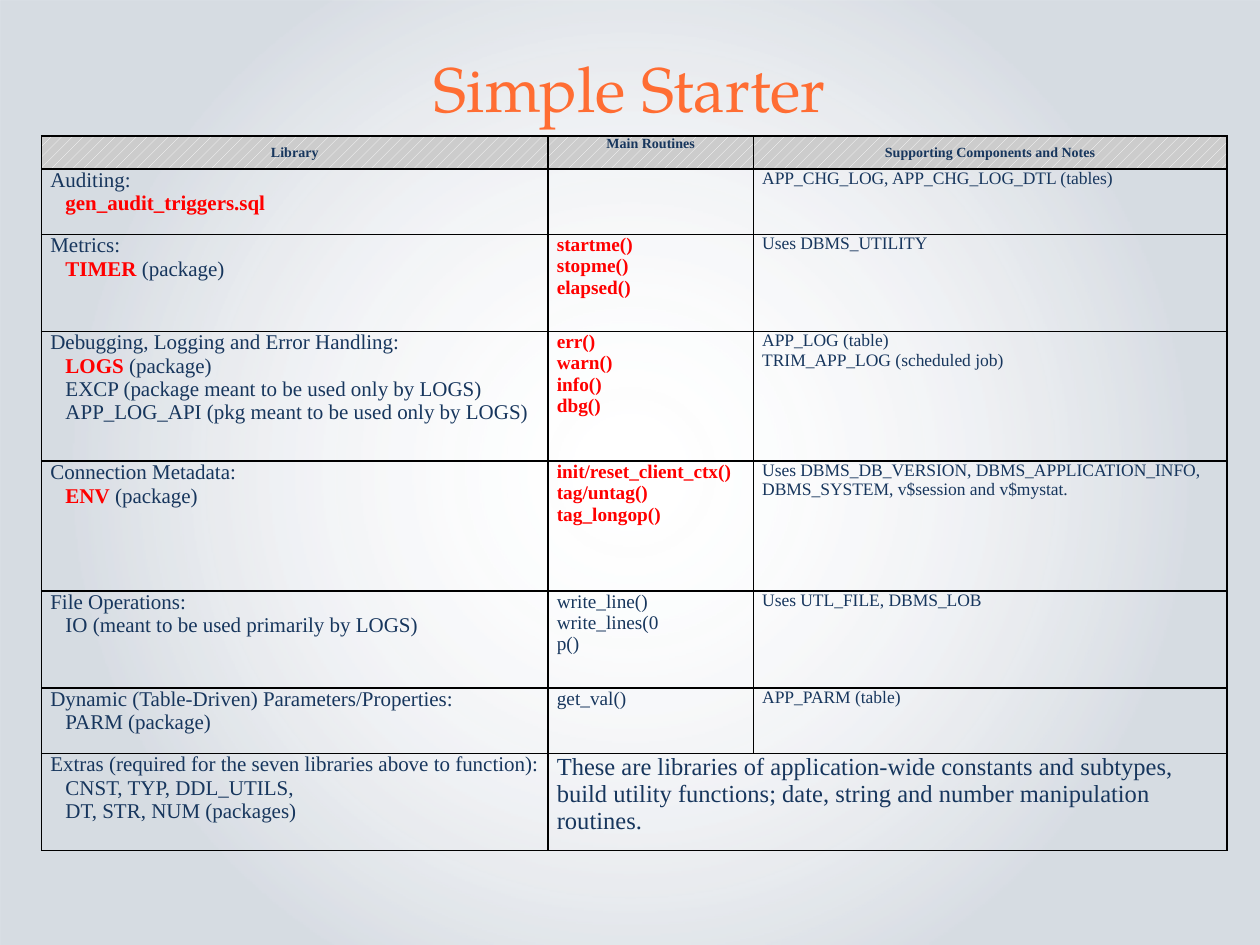
from lxml import etree
from pptx import Presentation
from pptx.dml.color import RGBColor
from pptx.enum.dml import MSO_PATTERN
from pptx.enum.shapes import MSO_SHAPE
from pptx.enum.text import MSO_ANCHOR, PP_ALIGN
from pptx.oxml import parse_xml
from pptx.oxml.ns import qn
from pptx.util import Inches, Pt

CENTER, LEFT = PP_ALIGN.CENTER, PP_ALIGN.LEFT
TOP, MIDDLE = MSO_ANCHOR.TOP, MSO_ANCHOR.MIDDLE
RECTANGLE = MSO_SHAPE.RECTANGLE
PATTERN = MSO_PATTERN.PERCENT_20

# Content: *...* marks a highlighted name, each list item is one paragraph
TITLE = "Simple Starter"
HEADERS = ["Library", "Main Routines", "Supporting Components and Notes"]
LIBRARIES = [
    (["Auditing:", "*gen_audit_triggers.sql*"],
     [],
     ["APP_CHG_LOG, APP_CHG_LOG_DTL (tables)"]),
    (["Metrics:", "*TIMER* (package)"],
     ["*startme()*", "*stopme()*", "*elapsed()*"],
     ["Uses DBMS_UTILITY"]),
    (["Debugging, Logging and Error Handling:", "*LOGS* (package)",
      "EXCP (package meant to be used only by LOGS)",
      "APP_LOG_API (pkg meant to be used only by LOGS)"],
     ["*err()*", "*warn()*", "*info()*", "*dbg()*"],
     ["APP_LOG (table)", "TRIM_APP_LOG (scheduled job)"]),
    (["Connection Metadata:", "*ENV* (package)"],
     ["*init/reset_client_ctx()*", "*tag/untag()*", "*tag_longop()*"],
     ["Uses DBMS_DB_VERSION, DBMS_APPLICATION_INFO, "
      "DBMS_SYSTEM, v$session and v$mystat."]),
    (["File Operations:", "IO (meant to be used primarily by LOGS)"],
     ["write_line()", "write_lines(0", "p()"],
     ["Uses UTL_FILE, DBMS_LOB"]),
    (["Dynamic (Table-Driven) Parameters/Properties:", "PARM (package)"],
     ["get_val()"],
     ["APP_PARM (table)"]),
]
EXTRAS = ["Extras (required for the seven libraries above to function):",
          "CNST, TYP, DDL_UTILS,", "DT, STR, NUM (packages)"]
EXTRAS_NOTE = ["These are libraries of application-wide constants and subtypes, "
               "build utility functions; date, string and number manipulation "
               "routines."]

THEME = {
    "title_font": "TeX Gyre Pagella", "body_font": "Times New Roman",
    "title": "FF6D33", "text": "17365D", "highlight": "FF0000",
    "border": "000000", "hatch": "FFFFFF", "header": "CCCCCC",
    "center": "FFFFFF", "edge": "17365D",
    "title_size": 36, "header_size": 8, "column_sizes": (12, 11, 10),
    "extras_size": 14,
}
COLUMN_WIDTHS = (4.02, 1.63, 3.76)
ROW_HEIGHTS = (0.26, 0.52, 0.77, 1.03, 1.03, 0.77, 0.52, 0.77)
INDENT = 0.12


def write(frame, paragraphs, size, font=THEME["body_font"], color=THEME["text"],
          bold=False, align=LEFT, indent=0):
    """Fill a text frame; paragraphs after the first get the indent."""
    for i, text in enumerate(paragraphs):
        paragraph = frame.paragraphs[0] if i == 0 else frame.add_paragraph()
        paragraph.alignment = align
        if i and indent:
            properties = paragraph._p.get_or_add_pPr()
            properties.set("marL", "0")
            properties.set("indent", str(Inches(indent)))
        for j, part in enumerate(text.split("*")):
            if not part:
                continue
            marked = j % 2 == 1
            run = paragraph.add_run()
            run.text = part
            run.font.name = font
            run.font.size = Pt(size)
            run.font.bold = bold or marked
            run.font.color.rgb = RGBColor.from_string(
                THEME["highlight"] if marked else color)
    if not paragraphs:
        frame.paragraphs[0].font.size = Pt(size)


def add_borders(cell):
    properties = cell._tc.get_or_add_tcPr()
    for i, side in enumerate(("lnL", "lnR", "lnT", "lnB")):
        line = etree.Element(qn(f"a:{side}"), w=str(Pt(1)))
        fill = etree.SubElement(line, qn("a:solidFill"))
        etree.SubElement(fill, qn("a:srgbClr"), val=THEME["border"])
        properties.insert(i, line)


def add_backdrop(slide, width, height):
    backdrop = slide.shapes.add_shape(RECTANGLE, 0, 0, width, height)
    backdrop.shadow.inherit = False
    backdrop.line.fill.background()
    backdrop.fill.background()
    properties = backdrop._element.spPr
    gradient = parse_xml(
        '<a:gradFill xmlns:a="http://schemas.openxmlformats.org/drawingml/2006/main"'
        ' rotWithShape="1"><a:gsLst>'
        f'<a:gs pos="0"><a:srgbClr val="{THEME["center"]}"><a:alpha val="0"/>'
        '</a:srgbClr></a:gs>'
        f'<a:gs pos="72000"><a:srgbClr val="{THEME["edge"]}"><a:alpha val="17000"/>'
        '</a:srgbClr></a:gs></a:gsLst><a:path path="circle">'
        '<a:fillToRect l="50000" t="50000" r="50000" b="50000"/></a:path></a:gradFill>')
    properties.replace(properties.find(qn("a:noFill")), gradient)


def add_library_table(slide):
    table = slide.shapes.add_table(
        len(ROW_HEIGHTS), len(COLUMN_WIDTHS), Inches(0.33), Inches(1.08),
        Inches(sum(COLUMN_WIDTHS)), Inches(sum(ROW_HEIGHTS))).table
    table.first_row = table.horz_banding = False
    for column, width in zip(table.columns, COLUMN_WIDTHS):
        column.width = Inches(width)
    for row, height in zip(table.rows, ROW_HEIGHTS):
        row.height = Inches(height)
    for cell in table.iter_cells():
        cell.margin_left = cell.margin_right = Inches(0.07)
        cell.margin_top = cell.margin_bottom = 0
        cell.vertical_anchor = TOP
        cell.fill.background()
        add_borders(cell)

    # Header row
    for c, header in enumerate(HEADERS):
        cell = table.cell(0, c)
        cell.fill.patterned()
        cell.fill.pattern = PATTERN
        cell.fill.fore_color.rgb = RGBColor.from_string(THEME["hatch"])
        cell.fill.back_color.rgb = RGBColor.from_string(THEME["header"])
        cell.vertical_anchor = TOP if c == 1 else MIDDLE
        write(cell.text_frame, [header], THEME["header_size"], bold=True, align=CENTER)

    # Library rows
    for r, library in enumerate(LIBRARIES, start=1):
        for c, (paragraphs, size) in enumerate(zip(library, THEME["column_sizes"])):
            write(table.cell(r, c).text_frame, paragraphs, size,
                  indent=INDENT if c == 0 else 0)

    # Extras row, with its note across two columns
    last = len(ROW_HEIGHTS) - 1
    write(table.cell(last, 0).text_frame, EXTRAS, THEME["column_sizes"][0], indent=INDENT)
    note = table.cell(last, 1)
    note.merge(table.cell(last, 2))
    write(note.text_frame, EXTRAS_NOTE, THEME["extras_size"])


def main():
    deck = Presentation()
    deck.slide_width, deck.slide_height = Inches(10), Inches(7.5)
    slide = deck.slides.add_slide(deck.slide_layouts[6])
    add_backdrop(slide, deck.slide_width, deck.slide_height)

    # Title
    heading = slide.shapes.add_textbox(
        Inches(0.5), Inches(0.3), Inches(9), Inches(0.78)).text_frame
    heading.word_wrap = True
    heading.vertical_anchor = MIDDLE
    write(heading, [TITLE], THEME["title_size"], font=THEME["title_font"],
          color=THEME["title"], align=CENTER)

    add_library_table(slide)
    deck.save("out.pptx")


if __name__ == "__main__":
    main()
